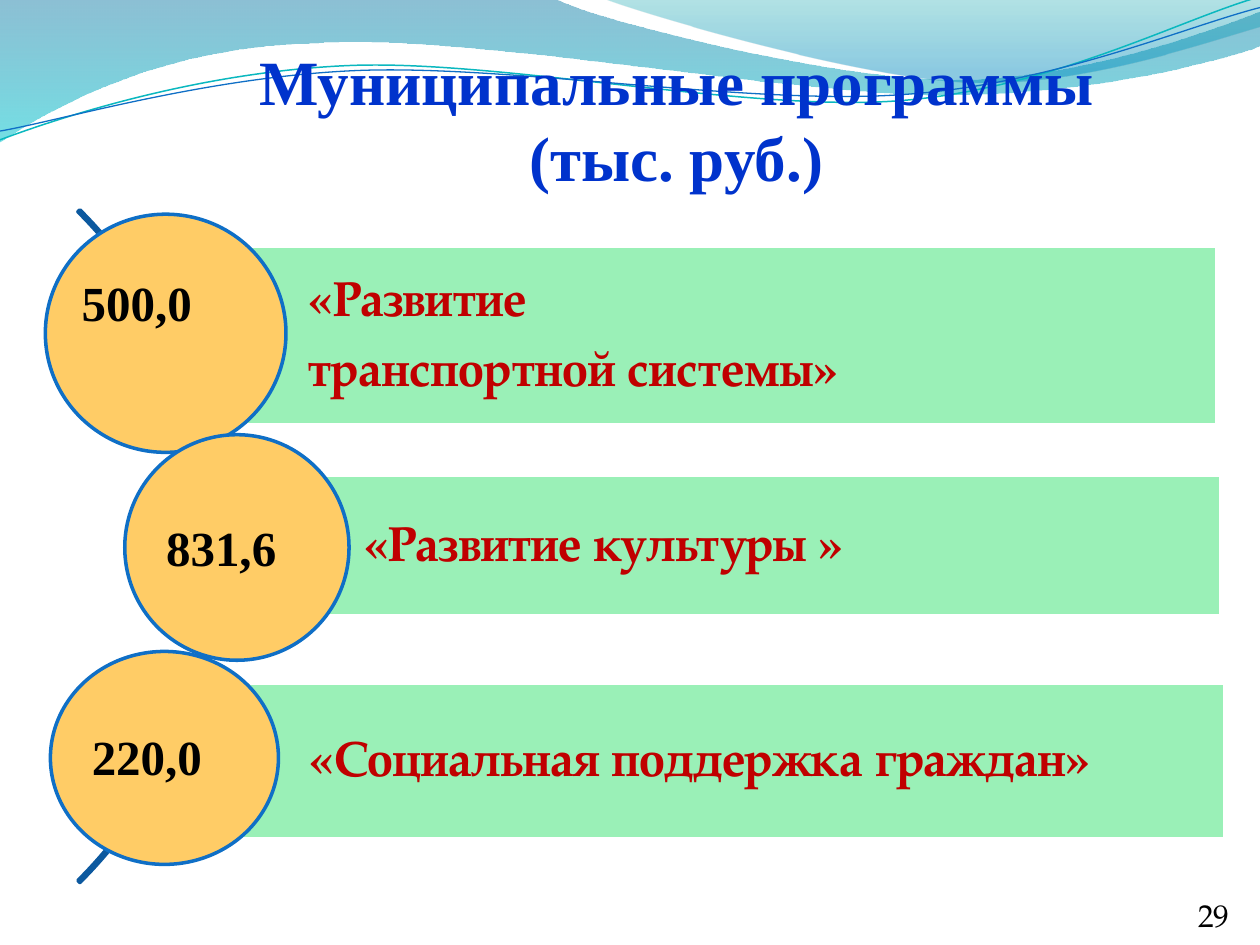
from dataclasses import dataclass
from math import cos, radians, sin

from lxml.etree import SubElement
from pptx import Presentation
from pptx.dml.color import RGBColor as Color
from pptx.enum.shapes import MSO_SHAPE as Preset
from pptx.enum.text import MSO_ANCHOR as Anchor, PP_ALIGN as Align
from pptx.oxml.ns import qn
from pptx.util import Inches, Pt

CELL = Inches(0.1)
COLUMNS, ROWS = 100, 75
THREAD_TILT = 2.7


@dataclass(frozen=True)
class Theme:
    """Colours and type styles of the slide."""
    panel: str = "9AF0B7"
    panel_edge: str = "FFFFFF"
    circle: str = "FFCC66"
    circle_edge: str = "0F6FC6"
    arc: str = "0C599F"
    wave_line: str = "0AB8BF"
    wave_stops: tuple = ((0, "0074A1", 45), (1, "00C6CF", 55))
    crest_stops: tuple = ((0, "00A1A9", 30), (0.8, "008BBF", 45))
    title: tuple = ("0033CC", {"name": "Times New Roman", "size": Pt(36), "bold": True})
    program: tuple = ("C00000", {"name": "TeX Gyre Pagella", "size": Pt(28), "bold": True})
    amount: tuple = ("000000", {"name": "Times New Roman", "size": Pt(28), "bold": True})
    number: tuple = ("000000", {"name": "TeX Gyre Pagella", "size": Pt(18), "bold": False})


THEME = Theme()

WAVE = (((0, 0),), ((44, -0.1),), ((47.6, 1.7), (66.4, 6.3), (75.8, 6.3)),
        ((85.3, 6.3), (95.8, 2.6), (100, 0.9)), ((100.1, 3.6),),
        ((98.3, 4.4), (87, 7.6), (74.6, 7.5)), ((62.2, 7.5), (38.2, 2.8), (25.7, 3.4)),
        ((12.9, 3.6), (4.6, 8.3), (-0.1, 11.3)))
CREST = (((47.9, -0.1),), ((50.9, 1.1), (68.2, 6.2), (76.9, 6.5)),
         ((85.6, 6.9), (96.1, 3.2), (100, 2.1)), ((100, 0),))
THREADS = (
    (THEME.wave_line, 0.85, (49.9, 5.75),
     (((0, 11.1),), ((4.8, 9.3), (15.8, 5.7), (27.7, 5.2)),
      ((39.5, 4.7), (59.3, 8.9), (71.3, 8)), ((83.3, 7.1), (93.8, 1.5), (99.8, -0.2)))),
    (THEME.circle_edge, 0.75, (49.95, 5.9),
     (((0, 10.4),), ((4.7, 9.6), (16.4, 6.1), (28.3, 5.6)),
      ((40.3, 5.1), (59.7, 8.4), (71.7, 7.5)), ((83.6, 6.7), (94.1, 2.1), (100, 0.6)))),
)
PROGRAMS = (
    (("«Развитие", "транспортной системы»"), (15.6, 19.55, 81, 14.2), (3.6, 17, 19.1, 18.9)),
    (("«Развитие культуры »",), (20, 37.7, 76.9, 11.2), (9.9, 34.5, 17.8, 17.9)),
    (("«Социальная поддержка граждан»",), (15.7, 54.2, 81.5, 12.4), (4, 51.7, 18.1, 16.9)),
)
AMOUNTS = (("831,6", (12.2, 40.6, 14.2, 5.7)), ("220,0", (6.3, 57.2, 14.2, 5.7)),
           ("500,0", (5.5, 21.1, 16.2, 5.7)))


def cells(box):
    """Turn grid columns and rows into slide lengths."""
    return [round(value * CELL) for value in box]


def apply(target, values):
    """Set each attribute of target from a dict of format values."""
    for name, value in values.items():
        setattr(target, name, value)


def set_line(shape, colour, width):
    """Give a shape a solid outline and no shadow."""
    shape.shadow.inherit = False
    shape.line.color.rgb = Color.from_string(colour)
    shape.line.width = Pt(width)


def turn(point, centre, angle):
    """Rotate a point clockwise around a centre."""
    x, y = point[0] - centre[0], point[1] - centre[1]
    cosine, sine = cos(radians(angle)), sin(radians(angle))
    return centre[0] + x * cosine - y * sine, centre[1] + x * sine + y * cosine


def add_path(slide, segments, close):
    """Draw a freeform whose three-point segments are cubic curves."""
    start, *rest = [cells(point) for segment in segments for point in segment]
    builder = slide.shapes.build_freeform(*start)
    builder.add_line_segments(rest, close=close)
    shape = builder.convert_to_shape()
    shape.shadow.inherit = False
    steps = iter(list(shape.element.spPr.iter(qn("a:lnTo"))))
    for segment in segments[1:]:
        pieces = [next(steps) for _ in segment]
        if len(pieces) == 3:
            pieces[0].addprevious(curve := pieces[0].makeelement(qn("a:cubicBezTo")))
            for piece in pieces:
                curve.append(piece[0])
                piece.getparent().remove(piece)
    return shape


def add_wave(slide, segments, stops):
    """Draw a closed wave with a translucent vertical gradient."""
    shape = add_path(slide, segments, True)
    shape.line.fill.background()
    shape.fill.gradient()
    shape.fill.gradient_angle = 270
    for stop, (position, colour, _) in zip(shape.fill.gradient_stops, stops):
        stop.position = position
        stop.color.rgb = Color.from_string(colour)
    for node, (_, _, opacity) in zip(shape.element.spPr.iter(qn("a:srgbClr")), stops):
        SubElement(node, qn("a:alpha")).set("val", str(opacity * 1000))


def add_thread(slide, colour, width, centre, segments):
    """Draw an open thin curve in a tilted frame."""
    level = [[turn(point, centre, THREAD_TILT) for point in segment] for segment in segments]
    shape = add_path(slide, level, False)
    shape.rotation = 360 - THREAD_TILT
    shape.fill.background()
    set_line(shape, colour, width)


def add_preset(slide, preset, box, fill, edge):
    """Draw a preset shape with a fill and a two-point outline."""
    shape = slide.shapes.add_shape(preset, *cells(box))
    if fill:
        shape.fill.solid()
        shape.fill.fore_color.rgb = Color.from_string(fill)
    else:
        shape.fill.background()
    set_line(shape, edge, 2)
    return shape


def write(shape, lines, style, frame_format, paragraph_format):
    """Write one paragraph per line in one type style."""
    colour, font_format = style
    frame = shape.text_frame
    apply(frame, frame_format)
    for index, line in enumerate(lines):
        paragraph = frame.add_paragraph() if index else frame.paragraphs[0]
        apply(paragraph, paragraph_format)
        run = paragraph.add_run()
        run.text = line
        apply(run.font, font_format)
        run.font.color.rgb = Color.from_string(colour)


def add_label(slide, lines, box, style, wrap=True, align=Align.LEFT):
    """Add a text box."""
    shape = slide.shapes.add_textbox(*cells(box))
    write(shape, lines, style, {"word_wrap": wrap}, {"alignment": align})


def add_program(slide, lines, panel_box, circle_box):
    """Add a program panel and the circle that overlaps its left end."""
    panel = add_preset(slide, Preset.RECTANGLE, panel_box, THEME.panel, THEME.panel_edge)
    margin = Inches(0.08)
    write(panel, lines, THEME.program,
          {"word_wrap": True, "vertical_anchor": Anchor.MIDDLE, "margin_left": Inches(0.89),
           "margin_top": margin, "margin_right": margin, "margin_bottom": margin},
          {"alignment": Align.LEFT, "line_spacing": 0.9, "space_after": Pt(9.8)})
    add_preset(slide, Preset.OVAL, circle_box, THEME.circle, THEME.circle_edge)


def add_arc(slide):
    """Add the thin arc that runs behind the circles."""
    arc = add_preset(slide, Preset.BLOCK_ARC, (-58.1, 5.6, 75.5, 75.5), None, THEME.arc)
    for index, value in enumerate((189, 27, 0.003)):
        arc.adjustments[index] = value


def main():
    """Build the slide and save it."""
    presentation = Presentation()
    apply(presentation, {"slide_width": COLUMNS * CELL, "slide_height": ROWS * CELL})
    slide = presentation.slides.add_slide(presentation.slide_layouts[6])
    add_wave(slide, WAVE, THEME.wave_stops)
    add_wave(slide, CREST, THEME.crest_stops)
    for thread in THREADS:
        add_thread(slide, *thread)
    add_label(slide, ("Муниципальные программы ", "(тыс. руб.) "), (19.2, 2.9, 70.2, 13.1),
              THEME.title, wrap=False, align=Align.CENTER)
    add_arc(slide)
    for program in PROGRAMS:
        add_program(slide, *program)
    for amount, box in AMOUNTS:
        add_label(slide, (amount,), box, THEME.amount)
    add_label(slide, ("29",), (94.1, 70.6, 5.1, 4), THEME.number)
    presentation.save("out.pptx")


if __name__ == "__main__":
    main()
